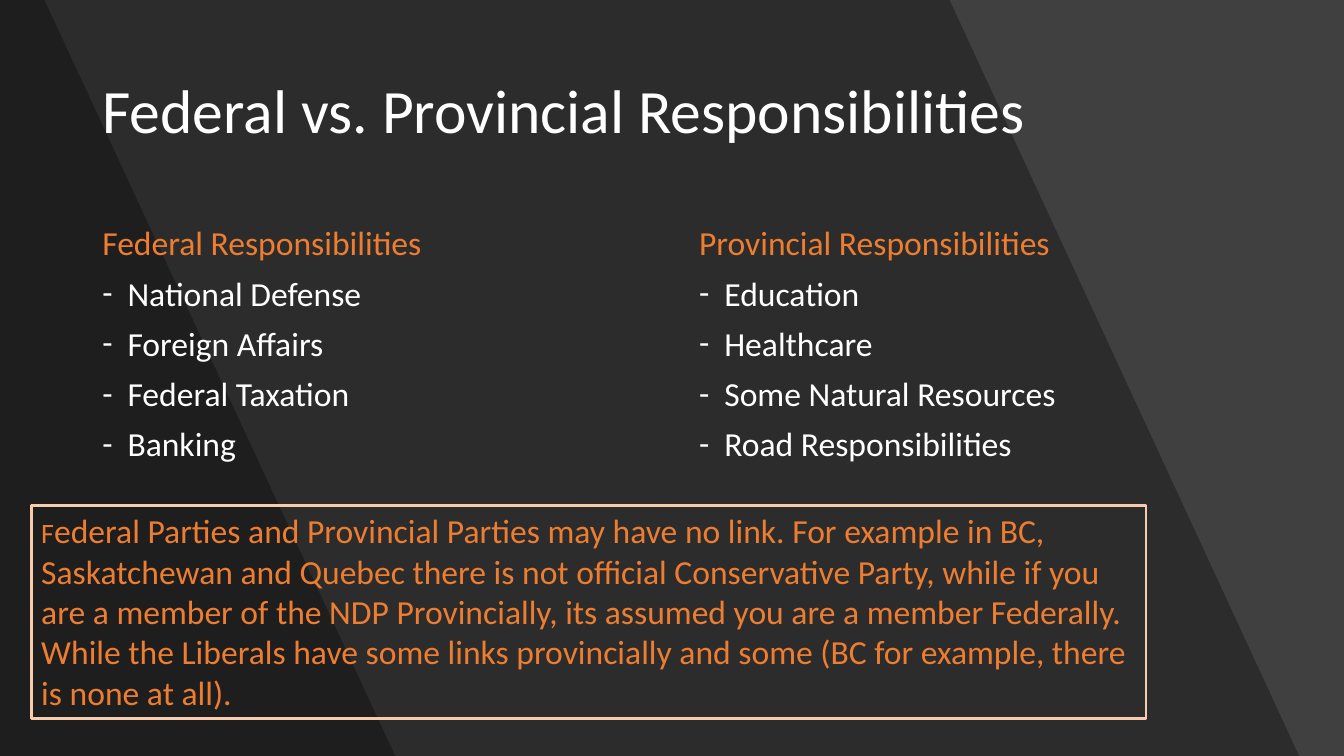
from dataclasses import dataclass

from lxml.etree import SubElement
from pptx import Presentation
from pptx.dml.color import RGBColor
from pptx.enum.shapes import MSO_SHAPE as Preset
from pptx.enum.text import MSO_ANCHOR as Anchor, PP_ALIGN as Align
from pptx.oxml.ns import qn
from pptx.util import Cm, Pt

FONT = "Calibri"
BACKGROUND = "404040"
BLACK = "000000"
WHITE = "FFFFFF"
ORANGE = "ED7D31"
PEACH = "F8CBAD"
SLIDE_WIDTH = Cm(33.87)
SLIDE_HEIGHT = Cm(19.05)


@dataclass
class Band:
    top_width: float
    bottom_width: float


@dataclass
class Column:
    left: float
    heading: str
    duties: list[str]


BANDS = [Band(23.93, 32.74), Band(1.12, 9.96)]
COLUMNS = [
    Column(2.33, "Federal Responsibilities",
           ["National Defense", "Foreign Affairs", "Federal Taxation", "Banking"]),
    Column(17.37, "Provincial Responsibilities",
           ["Education", "Healthcare", "Some Natural Resources", "Road Responsibilities"]),
]
PARTY_NOTE = (
    "ederal Parties and Provincial Parties may have no link. For example in BC, "
    "Saskatchewan and Quebec there is not official Conservative Party, while if you "
    "are a member of the NDP Provincially, its assumed you are a member Federally. "
    "While the Liberals have some links provincially and some (BC for example, there "
    "is none at all)."
)


def paint(color_format, color: str) -> None:
    color_format.rgb = RGBColor.from_string(color)


def add_text(paragraph, text: str, *, size: float = 24, color: str = WHITE,
             line_spacing: float = 1.0, before: float = 0, after: float = 0,
             bullet: str = "") -> None:
    paragraph.alignment = Align.LEFT
    paragraph.line_spacing = line_spacing
    paragraph.space_before = Pt(before)
    paragraph.space_after = Pt(after)
    if bullet:
        properties = paragraph._p.get_or_add_pPr()
        properties.set("marL", str(Cm(0.635)))
        properties.set("indent", str(-Cm(0.635)))
        SubElement(properties, qn("a:buFont")).set("typeface", FONT)
        SubElement(properties, qn("a:buChar")).set("char", bullet)
    run = paragraph.add_run()
    run.text = text
    run.font.name = FONT
    run.font.size = Pt(size)
    paint(run.font.color, color)


def add_text_frame(slide, left: float, top: float, width: float, height: float,
                   anchor=Anchor.TOP):
    text_box = slide.shapes.add_textbox(Cm(left), Cm(top), Cm(width), Cm(height))
    frame = text_box.text_frame
    frame.word_wrap = True
    frame.vertical_anchor = anchor
    return frame


def add_band(slide, band: Band) -> None:
    builder = slide.shapes.build_freeform(0, 0)
    builder.add_line_segments([
        (Cm(band.top_width), 0),
        (Cm(band.bottom_width), SLIDE_HEIGHT),
        (0, SLIDE_HEIGHT),
    ], close=True)
    shape = builder.convert_to_shape()
    shape.shadow.inherit = False
    shape.fill.solid()
    paint(shape.fill.fore_color, BLACK)
    fill_color = shape._element.spPr.find(qn("a:solidFill"))[0]
    SubElement(fill_color, qn("a:alpha")).set("val", "30000")
    shape.line.fill.background()


def add_column(slide, column: Column) -> None:
    frame = add_text_frame(slide, column.left, 5.59, 14.15, 11.58)
    add_text(frame.paragraphs[0], column.heading, color=ORANGE,
             line_spacing=0.9, before=10)
    for duty in column.duties:
        add_text(frame.add_paragraph(), duty, line_spacing=0.9, before=10, bullet="-")


def add_note(slide) -> None:
    shape = slide.shapes.add_shape(Preset.RECTANGLE, Cm(0.79), Cm(12.73),
                                   Cm(28.09), Cm(5.38))
    shape.shadow.inherit = False
    shape.fill.background()
    paint(shape.line.color, PEACH)
    shape.line.width = Pt(2)
    frame = shape.text_frame
    frame.word_wrap = True
    frame.vertical_anchor = Anchor.TOP
    paragraph = frame.paragraphs[0]
    add_text(paragraph, "F", size=20, color=ORANGE, after=6)
    add_text(paragraph, PARTY_NOTE, color=ORANGE, after=6)


def main() -> None:
    presentation = Presentation()
    presentation.slide_width = SLIDE_WIDTH
    presentation.slide_height = SLIDE_HEIGHT
    slide = presentation.slides.add_slide(presentation.slide_layouts[6])
    slide.background.fill.solid()
    paint(slide.background.fill.fore_color, BACKGROUND)
    for band in BANDS:
        add_band(slide, band)
    title = add_text_frame(slide, 2.33, 1.01, 29.21, 3.68, Anchor.MIDDLE)
    add_text(title.paragraphs[0], "Federal vs. Provincial Responsibilities",
             size=44, line_spacing=0.9)
    for column in COLUMNS:
        add_column(slide, column)
    add_note(slide)
    presentation.save("out.pptx")


if __name__ == "__main__":
    main()
